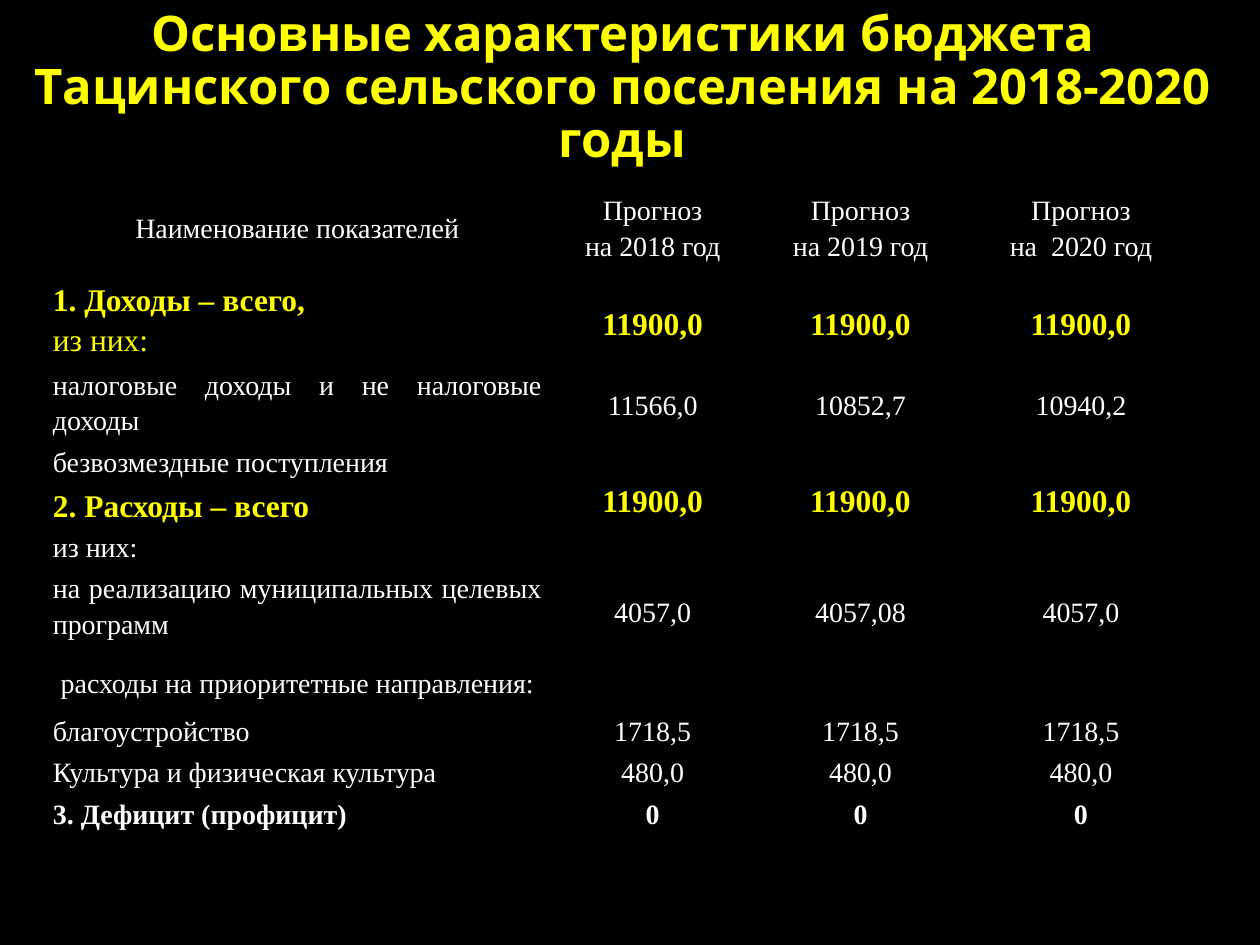
from pptx import Presentation
from pptx.dml.color import RGBColor
from pptx.enum.text import MSO_ANCHOR, PP_ALIGN
from pptx.oxml import parse_xml
from pptx.oxml.ns import nsdecls
from pptx.util import Inches, Pt

THEME = {
    "black": RGBColor(0, 0, 0),
    "white": RGBColor(255, 255, 255),
    "yellow": RGBColor(255, 255, 0),
    "head": ("Open Sans", 28),
    "body": ("Times New Roman", 16),
    "total": ("Times New Roman", 18),
}
MID, TOP = MSO_ANCHOR.MIDDLE, MSO_ANCHOR.TOP
MIX, MID_C = PP_ALIGN.JUSTIFY, PP_ALIGN.CENTER

COLS = [4.02, 1.62, 1.68, 1.82]
# height, style, label, values, anchor of the values
ROWS = [
    (0.82, "head", "Наименование показателей",
     [f"Прогноз\nна {year} год" for year in ("2018", "2019", " 2020")], MID),
    (0.66, "total", "1. Доходы – всего,\nиз них:", ["11900,0"] * 3, MID),
    (0.49, "plain", "налоговые доходы и не налоговые доходы",
     ["11566,0", "10852,7", "10940,2"], MID),
    (0.33, "plain", "безвозмездные поступления", [""] * 3, TOP),
    (0.33, "total", "2. Расходы – всего", ["11900,0"] * 3, TOP),
    (0.33, "plain", "из них:", [""] * 3, TOP),
    (0.66, "plain", "на реализацию муниципальных целевых программ",
     ["4057,0", "4057,08", "4057,0"], MID),
    (0.47, "head", "расходы на приоритетные направления:", [""] * 3, TOP),
    (0.33, "plain", "благоустройство", ["1718,5"] * 3, TOP),
    (0.33, "plain", "Культура и физическая культура", ["480,0"] * 3, TOP),
    (0.33, "bold", "3. Дефицит (профицит)", ["0"] * 3, TOP),
]


def style(para, face, color, bold, align, gap):
    para.alignment = align
    para.line_spacing = gap
    for run in para.runs:
        run.font.name, size = THEME[face]
        run.font.size = Pt(size)
        run.font.bold = bold
        run.font.color.rgb = THEME[color]


def frame(cell):
    """Clear the fill of a cell and give it black 1 pt borders."""
    cell.fill.background()
    props = cell._tc.get_or_add_tcPr()
    for spot, side in enumerate(("lnL", "lnR", "lnT", "lnB")):
        props.insert(spot, parse_xml(
            f'<a:{side} {nsdecls("a")} w="{Pt(1)}"><a:solidFill>'
            f'<a:srgbClr val="{THEME["black"]}"/></a:solidFill></a:{side}>'))


deck = Presentation()
deck.slide_width, deck.slide_height = Inches(10), Inches(7.5)
slide = deck.slides.add_slide(deck.slide_layouts[6])
slide.background.fill.solid()
slide.background.fill.fore_color.rgb = THEME["black"]

title = slide.shapes.add_textbox(0, Inches(0.3), Inches(9.88), Inches(1.25)).text_frame
title.word_wrap = True
title.vertical_anchor = MID
title.margin_bottom = Inches(0.5)
title.text = ("Основные характеристики бюджета Тацинского сельского "
              "поселения на 2018-2020 годы")
style(title.paragraphs[0], "head", "yellow", True, MID_C, 0.9)

table = slide.shapes.add_table(
    len(ROWS), len(COLS), Inches(0.35), Inches(1.39),
    Inches(sum(COLS)), Inches(sum(row[0] for row in ROWS))).table
table.first_row = table.horz_banding = False
for col, width in zip(table.columns, COLS):
    col.width = Inches(width)

for r, (height, kind, label, values, anchor) in enumerate(ROWS):
    table.rows[r].height = Inches(height)
    total = kind == "total"
    for c, text in enumerate([label, *values]):
        cell = table.cell(r, c)
        frame(cell)
        cell.margin_left = cell.margin_right = Inches(0.07)
        cell.margin_top = cell.margin_bottom = 0
        centred = c > 0 or kind == "head"
        cell.vertical_anchor = MID if kind == "head" else anchor if c else TOP
        cell.text_frame.text = text
        for n, para in enumerate(cell.text_frame.paragraphs):
            style(para, "total" if total else "body",
                  "yellow" if total else "white",
                  kind in ("total", "bold") and n == 0,
                  MID_C if centred else MIX,
                  1 if total and c and anchor == TOP else 1.15)

deck.save("out.pptx")
